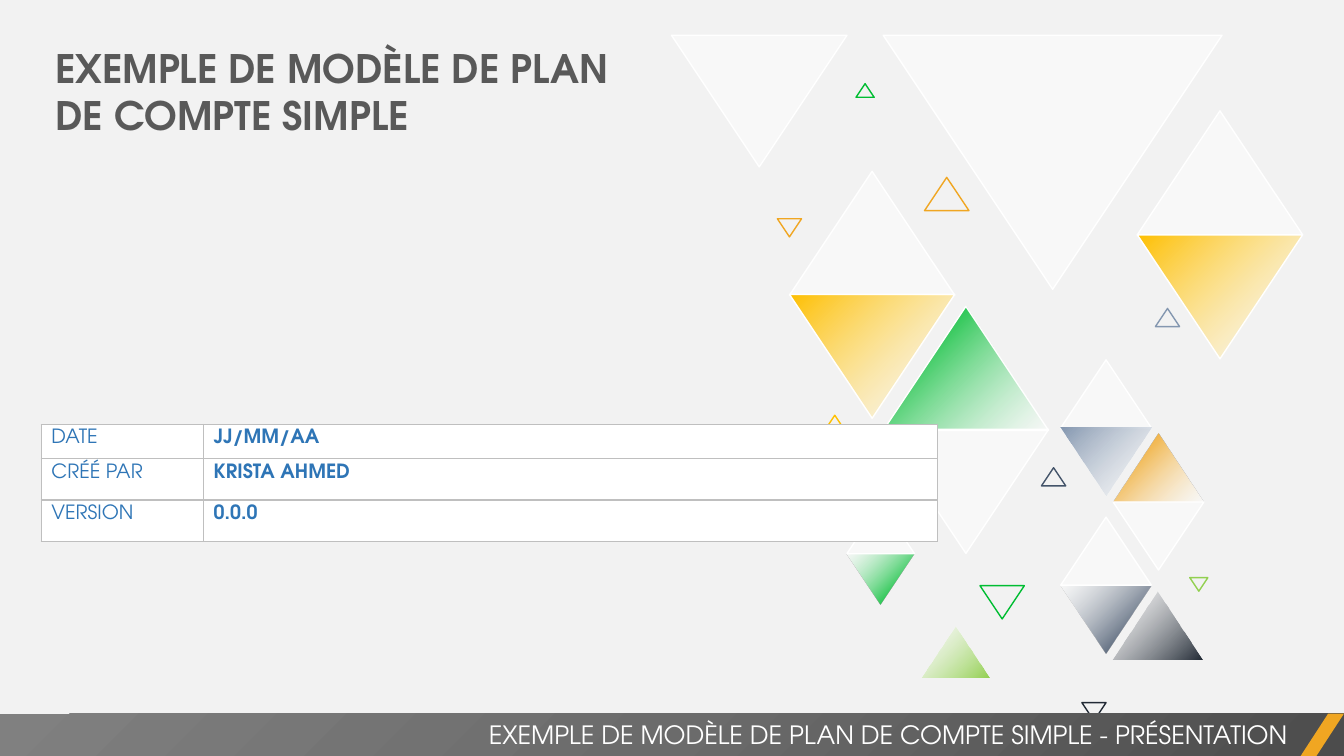
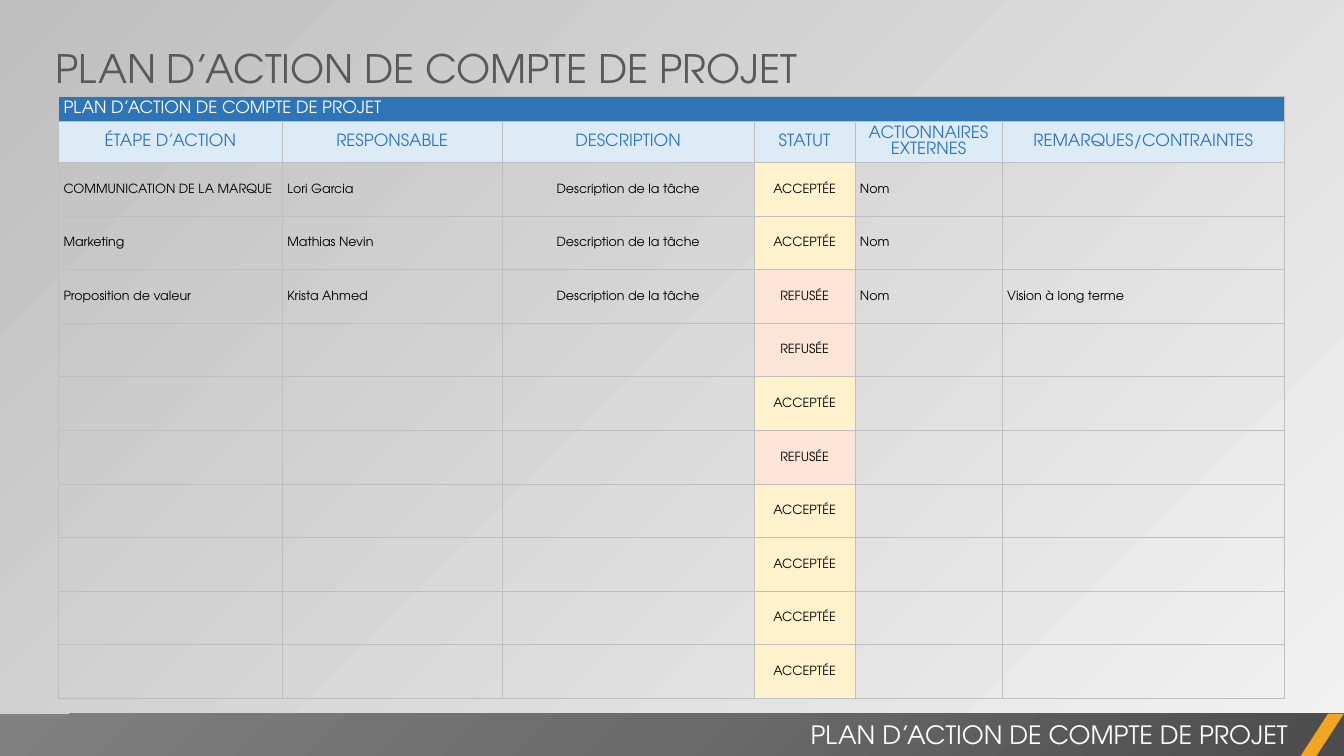
from dataclasses import dataclass

from lxml import etree
from pptx import Presentation
from pptx import slide as sl
from pptx import table as tb
from pptx.dml import color, fill as fl
from pptx.enum import shapes, text
from pptx.oxml import ns
from pptx import util as u

FONT = "TeX Gyre Adventor"
COLORS = {
    "white": "FFFFFF", "black": "000000", "paper": "F2F2F2", "grey": "BFBFBF",
    "title": "595959", "band_dark": "4C4C4C", "band_mid": "6B6B6B", "band_light": "808080",
    "yellow": "FFC000", "orange": "F0A622", "green": "00BD32", "lime": "92D050",
    "ink": "222A35", "slate": "44546A", "steel": "8497B0",
    "info_blue": "2E75B6", "table_blue": "2F75B5", "pale_blue": "DDEBF7",
    "accepted": "FFF2CC", "refused": "FCE4D6",
}
LEFT, CENTER, RIGHT = text.PP_ALIGN.LEFT, text.PP_ALIGN.CENTER, text.PP_ALIGN.RIGHT
BAND_TOP, BAND_HEIGHT = 7.08, 0.42
SLIDE_WIDTH, SLIDE_HEIGHT = 13.33, 7.5
LINEAR = '<a:lin ang="13500000" scaled="0"/>'
CIRCLE = '<a:path path="circle"><a:fillToRect l="100000" t="100000"/></a:path>'


@dataclass(frozen=True)
class Stop:
    pos: int
    color: str
    opacity: int = 100


@dataclass(frozen=True)
class Triangle:
    x: float
    y: float
    width: float
    up: bool = True
    tint: str = "white"
    style: str = "ghost"
    edge: bool = True


@dataclass(frozen=True)
class TextStyle:
    size: float
    color: str
    bold: bool = False
    align: text.PP_ALIGN = LEFT


@dataclass(frozen=True)
class Step:
    action: str = ""
    owner: str = ""
    task: str = ""
    status: str = "ACCEPTÉE"
    holder: str = ""
    remark: str = ""


FADE = Stop(100, "white", 50)
TRIANGLES = [
    Triangle(7.83, 1.7, 1.64),
    Triangle(7.83, 2.92, 1.64, False, "yellow", "fade_out"),
    Triangle(8.76, 3.04, 1.64, True, "green", "fade_in"),
    Triangle(8.76, 4.26, 1.64, False),
    Triangle(8.76, 0.35, 3.36, False),
    Triangle(11.03, 5.87, 0.9, True, "ink", "fade_out", False),
    Triangle(10.52, 5.81, 0.9, False, "slate", "fade_in", False),
    Triangle(10.52, 5.13, 0.9),
    Triangle(10.52, 3.57, 0.9),
    Triangle(10.52, 4.24, 0.9, False, "steel", "fade_out", False),
    Triangle(11.04, 4.3, 0.9, True, "orange", "fade_in", False),
    Triangle(11.04, 4.98, 0.9, False),
    Triangle(9.14, 6.22, 0.67, True, "lime", "fade_out", False),
    Triangle(8.4, 5.49, 0.67, False, "green", "fade_in", False),
    Triangle(8.4, 4.99, 0.67),
    Triangle(11.28, 1.1, 1.64),
    Triangle(11.28, 2.33, 1.64, False, "yellow", "fade_out"),
    Triangle(9.72, 5.81, 0.44, False, "green", "outline"),
    Triangle(8.06, 4.12, 0.44, True, "yellow", "outline"),
    Triangle(10.33, 4.64, 0.24, True, "slate", "outline"),
    Triangle(10.73, 6.97, 0.24, False, "ink", "outline"),
    Triangle(7.71, 2.17, 0.24, False, "orange", "outline"),
    Triangle(11.46, 3.06, 0.24, True, "steel", "outline"),
    Triangle(8.49, 0.83, 0.18, True, "green", "outline"),
    Triangle(11.8, 5.73, 0.18, False, "lime", "outline"),
    Triangle(9.17, 1.76, 0.44, True, "orange", "outline"),
    Triangle(6.66, 0.35, 1.74, False),
]
TASK = "Description de la tâche"
STEPS = [
    Step("COMMUNICATION DE LA MARQUE", "Lori Garcia", TASK, holder="Nom"),
    Step("Marketing", "Mathias Nevin", TASK, holder="Nom"),
    Step("Proposition de valeur", "Krista Ahmed", TASK, "REFUSÉE", "Nom", "Vision à long terme"),
    Step(status="REFUSÉE"),
    Step(),
    Step(status="REFUSÉE"),
    Step(), Step(), Step(), Step(),
]
HEADINGS = ["ÉTAPE D’ACTION", "RESPONSABLE", "DESCRIPTION", "STATUT",
            "ACTIONNAIRES EXTERNES", "REMARQUES/CONTRAINTES"]
COLUMN_ALIGNS = [LEFT, LEFT, CENTER, CENTER, LEFT, LEFT]


def rgb(name: str) -> color.RGBColor:
    return color.RGBColor.from_string(COLORS[name])


def box(x: float, y: float, w: float, h: float) -> tuple[u.Length, ...]:
    return tuple(u.Inches(v) for v in (x, y, w, h))


def set_gradient(fill: fl.FillFormat, element: etree.ElementBase,
                 stops: list[Stop], geometry: str = LINEAR) -> None:
    fill.solid()
    gs = "".join(
        f'<a:gs pos="{stop.pos * 1000}"><a:srgbClr val="{COLORS[stop.color]}">'
        f'<a:alpha val="{stop.opacity * 1000}"/></a:srgbClr></a:gs>' for stop in stops)
    gradient = etree.fromstring(
        f'<a:gradFill {ns.nsdecls("a")} rotWithShape="1">'
        f'<a:gsLst>{gs}</a:gsLst>{geometry}</a:gradFill>')
    solid = next(element.iter(ns.qn("a:solidFill")))
    solid.getparent().replace(solid, gradient)


def write(tf, content: str, style: TextStyle) -> None:
    p = tf.paragraphs[0]
    p.alignment = style.align
    r = p.add_run()
    r.text = content
    r.font.name = FONT
    r.font.size = u.Pt(style.size)
    r.font.bold = style.bold
    r.font.color.rgb = rgb(style.color)


def add_title(s: sl.Slide, content: str, width: float, height: float, bold: bool = False) -> None:
    sp = s.shapes.title
    sp.left, sp.top, sp.width, sp.height = box(0.45, 0.39, width, height)
    tf = sp.text_frame
    tf.word_wrap = True
    tf.auto_size = text.MSO_AUTO_SIZE.NONE
    tf.vertical_anchor = text.MSO_ANCHOR.TOP
    write(tf, content, TextStyle(28, "title", bold))


def add_footer(s: sl.Slide, content: str, left: float) -> None:
    band = s.shapes.add_shape(shapes.MSO_SHAPE.RECTANGLE,
                              *box(0, BAND_TOP, SLIDE_WIDTH, BAND_HEIGHT))
    set_gradient(band.fill, band.element,
                 [Stop(0, "band_dark"), Stop(50, "band_mid"), Stop(100, "band_light")], CIRCLE)
    slash = s.shapes.add_shape(shapes.MSO_SHAPE.PARALLELOGRAM,
                               *box(12.9, BAND_TOP, 0.43, BAND_HEIGHT))
    slash.adjustments[0] = 0.65
    slash.fill.solid()
    slash.fill.fore_color.rgb = rgb("orange")
    for sp in (band, slash):
        sp.line.fill.background()
        sp.shadow.inherit = False
    tf = s.shapes.add_textbox(*box(left, 7.09, 12.87 - left, 0.4)).text_frame
    tf.word_wrap = True
    write(tf, content, TextStyle(18, "white", align=RIGHT))


def add_triangle(group, tri: Triangle) -> None:
    sp = group.shapes.add_shape(shapes.MSO_SHAPE.ISOSCELES_TRIANGLE,
                                *box(tri.x, tri.y, tri.width, tri.width * 0.75))
    sp.rotation = 0 if tri.up else 180
    sp.shadow.inherit = False
    stops = {
        "ghost": [Stop(0, "white", 50), FADE],
        "fade_out": [Stop(0, tri.tint), FADE],
        "fade_in": [Stop(0, "white", 50), Stop(82, tri.tint)],
    }
    if tri.style == "outline":
        sp.fill.background()
    else:
        set_gradient(sp.fill, sp.element, stops[tri.style])
    if tri.edge:
        sp.line.color.rgb = rgb(tri.tint if tri.style == "outline" else "white")
        sp.line.width = u.Pt(1)
    else:
        sp.line.fill.background()


def add_table(s: sl.Slide, x: float, y: float, cols: list[float], rows: list[float]) -> tb.Table:
    t = s.shapes.add_table(len(rows), len(cols), *box(x, y, sum(cols), sum(rows))).table
    t.first_row = t.horz_banding = False
    for column, width in zip(t.columns, cols):
        column.width = u.Inches(width)
    for row, height in zip(t.rows, rows):
        row.height = u.Inches(height)
    return t


def set_cell(cell, content: str, style: TextStyle, fill: str | None, border: float) -> None:
    if fill:
        cell.fill.solid()
        cell.fill.fore_color.rgb = rgb(fill)
    else:
        cell.fill.background()
    if content:
        write(cell.text_frame, content, style)
    tc_pr = cell._tc.get_or_add_tcPr()
    for i, side in enumerate("LRTB"):
        tc_pr.insert(i, etree.fromstring(
            f'<a:ln{side} {ns.nsdecls("a")} w="{u.Pt(border)}"><a:solidFill>'
            f'<a:srgbClr val="{COLORS["grey"]}"/></a:solidFill></a:ln{side}>'))


def set_plan_cell(cell, content: str, style: TextStyle, fill: str | None = None) -> None:
    cell.vertical_anchor = text.MSO_ANCHOR.MIDDLE
    cell.margin_left = u.Inches(0.05 if style.align == LEFT else 0.01)
    cell.margin_top = cell.margin_right = u.Inches(0.01)
    cell.margin_bottom = 0
    set_cell(cell, content, style, fill, 0.5)


def build_cover(prs) -> None:
    s = prs.slides.add_slide(prs.slide_layouts[5])
    s.background.fill.solid()
    s.background.fill.fore_color.rgb = rgb("paper")
    group = s.shapes.add_group_shape()
    for tri in TRIANGLES:
        add_triangle(group, tri)
    add_title(s, "EXEMPLE DE MODÈLE DE PLAN DE COMPTE SIMPLE", 5.75, 1.04, bold=True)
    t = add_table(s, 0.41, 4.21, [1.61, 7.28], [0.34, 0.41, 0.41])
    info = [("DATE", "JJ/MM/AA"), ("CRÉÉ PAR", "KRISTA AHMED"), ("VERSION", "0.0.0")]
    for i, pair in enumerate(info):
        for j, content in enumerate(pair):
            set_cell(t.cell(i, j), content, TextStyle(14, "info_blue", j == 1), "white", 1)
    add_footer(s, "EXEMPLE DE MODÈLE DE PLAN DE COMPTE SIMPLE - PRÉSENTATION", 4.22)


def build_action_plan(prs) -> None:
    heading = "PLAN D’ACTION DE COMPTE DE PROJET"
    s = prs.slides.add_slide(prs.slide_layouts[5])
    set_gradient(s.background.fill, s.element, [Stop(0, "paper", 40), Stop(100, "grey")])
    add_footer(s, heading, 5.25)
    add_title(s, heading, 7.85, 0.57)
    t = add_table(s, 0.58, 0.96, [2.22, 2.18, 2.5, 1, 1.46, 2.8],
                  [0.24, 0.4] + [5.32 / len(STEPS)] * len(STEPS))
    t.cell(0, 0).merge(t.cell(0, len(HEADINGS) - 1))
    for j, label in enumerate(HEADINGS):
        set_plan_cell(t.cell(0, j), "" if j else heading, TextStyle(12, "white"), "table_blue")
        set_plan_cell(t.cell(1, j), label, TextStyle(12, "table_blue", align=CENTER), "pale_blue")
    status_fills = {"ACCEPTÉE": "accepted", "REFUSÉE": "refused"}
    for i, step in enumerate(STEPS, start=2):
        values = (step.action, step.owner, step.task, step.status, step.holder, step.remark)
        for j, (content, align) in enumerate(zip(values, COLUMN_ALIGNS)):
            set_plan_cell(t.cell(i, j), content, TextStyle(9, "black", align=align),
                          status_fills.get(content))


def main() -> None:
    prs = Presentation()
    prs.slide_width = u.Inches(SLIDE_WIDTH)
    prs.slide_height = u.Inches(SLIDE_HEIGHT)
    build_cover(prs)
    build_action_plan(prs)
    prs.save("out.pptx")


if __name__ == "__main__":
    main()
